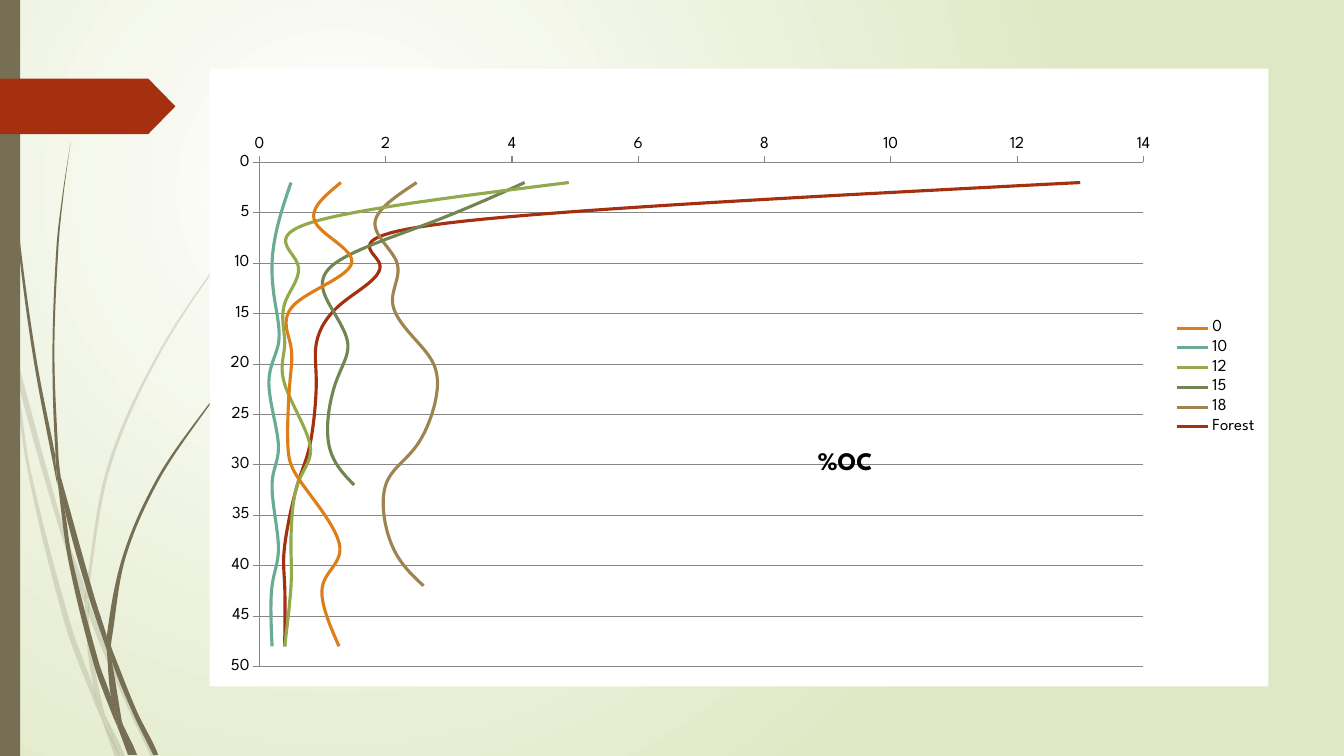
from lxml.etree import SubElement
from pptx import Presentation
from pptx.chart.data import XyChartData
from pptx.dml.color import RGBColor
from pptx.enum.chart import XL_CHART_TYPE as ChartType, XL_LEGEND_POSITION as LegendSide
from pptx.enum.chart import XL_TICK_MARK as Tick
from pptx.enum.shapes import MSO_SHAPE as Preset
from pptx.oxml import parse_xml
from pptx.oxml.ns import nsdecls, qn
from pptx.util import Inches, Pt

COLORS = {
    "white": "FFFFFF", "pale green": "DFE8C4", "stem": "766F54", "arrow": "A53010",
    "text": "000000", "axis": "868686",
    "0": "DE7E18", "10": "6AAC91", "12": "92AA4C",
    "15": "728653", "18": "9F8351", "Forest": "A53010",
}
FONT = "League Spartan"
CELL = Inches(0.01)  # the slide is a grid of 1333 by 750 cells


def curve(points):
    """Two handles and an end, in EMU, for each stretch of a smooth edge."""
    padded = [points[0], *points, points[-1]]
    stretches = []
    for a, b, c, d in zip(padded, padded[1:], padded[2:], padded[3:]):
        reach = (c[1] - b[1]) / 3  # handles keep an even pace downwards
        for start, end, anchor, sign in ((a, c, b, 1), (b, d, c, -1)):
            rise = end[1] - start[1]
            slope = (end[0] - start[0]) / rise if rise else 0
            stretches.append((CELL * (anchor[0] + sign * reach * slope),
                              CELL * (anchor[1] + sign * reach)))
        stretches.append((CELL * c[0], CELL * c[1]))
    return stretches


def place(parent, index, **shares):
    """Give a chart part a manual layout in shares of the chart."""
    for old in parent.findall(qn("c:layout")):
        parent.remove(old)
    layout = parse_xml(f"<c:layout {nsdecls('c')}/>")
    manual = SubElement(layout, qn("c:manualLayout"))
    if "w" in shares:
        SubElement(manual, qn("c:layoutTarget")).set("val", "inner")
    for side in ("xMode", "yMode"):
        SubElement(manual, qn(f"c:{side}")).set("val", "edge")
    for name, share in shares.items():
        SubElement(manual, qn(f"c:{name}")).set("val", str(share))
    parent.insert(index, layout)


deck = Presentation()
deck.slide_width, deck.slide_height = 1333 * CELL, 750 * CELL
page = deck.slides.add_slide(deck.slide_layouts[6])

# Background: circular glow
glow = page.background.fill
glow.gradient()
for stop, name in zip(glow.gradient_stops, ("white", "pale green")):
    stop.color.rgb = RGBColor.from_string(COLORS[name])
gradient = page._element.find(".//" + qn("a:gradFill"))
gradient.replace(gradient.find(qn("a:lin")), parse_xml(
    f'<a:path {nsdecls("a")} path="circle">'
    '<a:fillToRect l="50000" t="50000" r="100000" b="100000"/></a:path>'))

# Grass: each blade is one edge out and the other edge back, in cells
faint_blades = [
    ([(0, 299), (10, 344), (11, 350)], [(11, 350), (9, 322), (0, 282)]),
    ([(14, 345), (17, 376), (58, 522), (84, 599)], [(85, 586), (62, 520), (14, 345)]),
    ([(88, 596), (88, 610), (123, 694), (150, 751)], [(155, 751), (127, 692), (92, 607), (88, 596)]),
    ([(105, 711), (119, 751)], [(124, 751), (105, 711)]),
    ([(11, 350), (28, 470), (65, 621), (92, 693), (101, 714)],
     [(101, 714), (99, 707), (93, 683), (70, 619), (31, 469), (17, 376), (11, 350)]),
    ([(84, 599), (87, 646), (93, 683), (96, 692), (105, 711)],
     [(105, 711), (103, 706), (91, 646), (88, 610), (88, 608), (84, 599)]),
    ([(88, 596), (85, 586), (85, 584), (107, 461), (158, 348), (228, 244), (268, 197), (312, 153)],
     [(312, 154), (268, 198), (229, 245), (160, 349), (110, 462), (88, 584), (88, 596)]),
    ([(101, 714), (114, 751)], [(119, 751), (101, 714)]),
    ([(85, 586), (84, 599), (88, 608), (88, 610)], [(88, 610), (88, 596), (85, 586)]),
    ([(93, 683), (99, 707), (101, 714), (119, 751)], [(119, 751), (105, 711), (96, 692), (93, 683)]),
]
solid_blades = [
    ([(3, 0), (4, 48), (7, 110), (17, 233), (33, 355), (56, 477), (57, 481)],
     [(57, 481), (55, 457), (55, 453), (36, 355), (19, 232), (8, 109), (5, 48), (4, 0)]),
    ([(60, 472), (64, 505), (88, 592), (106, 645)],
     [(106, 645), (106, 633), (106, 631), (93, 590), (60, 472)]),
    ([(110, 641), (111, 656), (132, 708), (152, 749)], [(157, 749), (136, 706), (113, 649), (110, 641)]),
    ([(57, 477), (68, 557), (93, 659), (111, 708), (117, 722)],
     [(117, 722), (116, 717), (110, 691), (98, 657), (72, 556), (64, 505), (57, 477)]),
    ([(70, 141), (62, 193), (56, 245), (52, 349), (55, 449), (60, 472)],
     [(60, 472), (58, 453), (54, 349), (58, 245), (63, 193), (70, 141)]),
    ([(122, 719), (133, 749)], [(136, 749), (122, 719)]),
    ([(55, 449), (55, 453), (57, 477), (64, 505)], [(64, 505), (60, 472), (55, 449)]),
    ([(110, 641), (106, 631), (122, 551), (156, 474), (204, 405), (231, 373), (245, 358), (260, 344)],
     [(261, 344), (245, 359), (231, 374), (205, 406), (158, 476), (125, 552), (111, 633), (110, 641)]),
    ([(117, 722), (127, 749)], [(131, 749), (117, 722)]),
    ([(106, 645), (110, 691), (116, 706), (122, 719)],
     [(122, 719), (121, 716), (111, 656), (109, 651), (106, 645)]),
    ([(106, 631), (106, 645), (109, 651), (111, 656)], [(111, 656), (110, 641), (106, 631)]),
    ([(110, 691), (116, 717), (117, 722), (130, 749)], [(133, 749), (122, 719), (116, 706), (110, 691)]),
]
for blades, opacity in ((faint_blades, 20), (solid_blades, 100)):
    for out, back in blades:
        builder = page.shapes.build_freeform(*(n * CELL for n in out[0]))
        builder.add_line_segments(curve(out) + curve([out[-1], *back]), close=True)
        blade = builder.convert_to_shape()
        blade.shadow.inherit = False
        blade.line.fill.background()
        blade.fill.solid()
        blade.fill.fore_color.rgb = RGBColor.from_string(COLORS["stem"])
        if opacity < 100:
            tint = blade._element.spPr.find(qn("a:solidFill"))[0]
            SubElement(tint, qn("a:alpha")).set("val", str(opacity * 1000))
        # Every three points make one curved stretch
        lines = list(blade._element.iter(qn("a:lnTo")))
        for first, second, third in zip(lines[::3], lines[1::3], lines[2::3]):
            bend = parse_xml(f"<a:cubicBezTo {nsdecls('a')}/>")
            first.addprevious(bend)
            for line in (first, second, third):
                bend.append(line[0])
                line.getparent().remove(line)

# Side bar and arrow
for preset, cells, color in (
    (Preset.RECTANGLE, (0, 0, 20, 750), "stem"),
    (Preset.PENTAGON, (0, 78, 174, 55), "arrow"),
):
    shape = page.shapes.add_shape(preset, *(n * CELL for n in cells))
    shape.shadow.inherit = False
    shape.line.fill.background()
    shape.fill.solid()
    shape.fill.fore_color.rgb = RGBColor.from_string(COLORS[color])
    if preset == Preset.PENTAGON:
        shape.adjustments[0] = 0.49

# Organic carbon by depth
depths = [2, 6, 10, 14, 18, 22, 28, 32, 38, 42, 48]
carbon = {
    "0": [1.29, 0.89, 1.46, 0.57, 0.49, 0.48, 0.45, 0.69, 1.27, 1, 1.26],
    "10": [0.5, 0.3, 0.2, 0.25, 0.3, 0.15, 0.3, 0.2, 0.3, 0.2, 0.2],
    "12": [4.9, 0.8, 0.6, 0.4, 0.4, 0.4, 0.8, 0.6, 0.5, 0.5, 0.4],
    "15": [4.2, 2.7, 1.2, 1.1, 1.4, 1.2, 1.1, 1.5, None, None, None],
    "18": [2.49, 1.83, 2.18, 2.11, 2.53, 2.82, 2.5, 2, 2.1, 2.6, None],
    "Forest": [13, 3, 1.9, 1.3, 0.9, 0.9, 0.8, 0.6, 0.4, 0.4, 0.4],
}
data = XyChartData()
for name, values in carbon.items():
    series = data.add_series(name)
    for value, depth in zip(values, depths):
        series.add_data_point(value, depth)
frame = page.shapes.add_chart(ChartType.XY_SCATTER_SMOOTH_NO_MARKERS,
                              *(n * CELL for n in (208, 68, 1050, 613)), data)
chart = frame.chart
chart.font.name, chart.font.size = FONT, Pt(10)
chart.font.color.rgb = RGBColor.from_string(COLORS["text"])
for series in chart.plots[0].series:
    series.format.line.width = Pt(2.25)
    series.format.line.color.rgb = RGBColor.from_string(COLORS[series.name])
    series._element.find(qn("c:smooth")).set("val", "1")
    for point in list(series._element.iter(qn("c:pt"))):
        if point[0].text == "None":
            point.getparent().remove(point)

# Axes: carbon along the top, depth growing downwards
for axis, top, unit in ((chart.category_axis, 14, 2), (chart.value_axis, 50, 5)):
    axis.minimum_scale, axis.maximum_scale, axis.major_unit = 0, top, unit
    axis.major_tick_mark, axis.minor_tick_mark = Tick.OUTSIDE, Tick.NONE
    axis.tick_labels.font.size = Pt(12)
    axis.format.line.color.rgb = RGBColor.from_string(COLORS["axis"])
chart.category_axis.has_major_gridlines = False
chart.value_axis.reverse_order = True
grid_line = chart.value_axis.major_gridlines.format.line
grid_line.color.rgb = RGBColor.from_string(COLORS["axis"])

# Legend and title
chart.has_legend = True
chart.legend.position = LegendSide.RIGHT
chart.legend.include_in_layout = False
chart.legend.font.size = Pt(12)
title = chart.chart_title
title.text_frame.text = "%OC"
span = title.text_frame.paragraphs[0].runs[0]
span.font.name, span.font.size, span.font.bold = FONT, Pt(18), True
span.font.color.rgb = RGBColor.from_string(COLORS["text"])
title._element.find(qn("c:overlay")).set("val", "1")
place(title._element, 1, x=0.57, y=0.61)

# Plot area and white chart ground
body = chart._chartSpace.find(qn("c:chart"))
place(body.find(qn("c:plotArea")), 0, x=0.047, y=0.152, w=0.835, h=0.816)
body.addnext(parse_xml(
    f'<c:spPr {nsdecls("c", "a")}><a:solidFill><a:srgbClr val="{COLORS["white"]}"/>'
    "</a:solidFill><a:ln><a:noFill/></a:ln></c:spPr>"))

deck.save("out.pptx")
